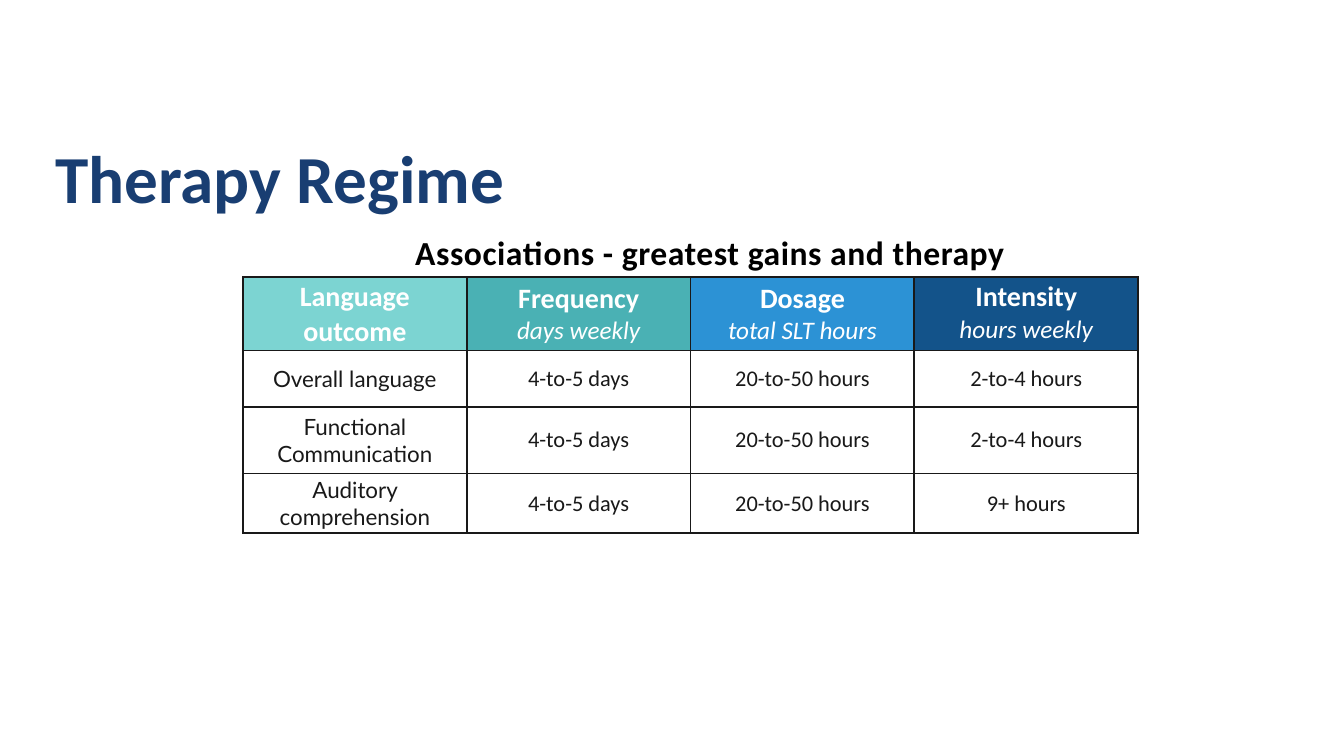
from lxml import etree
from pptx import Presentation
from pptx.dml.color import RGBColor
from pptx.enum.text import MSO_ANCHOR, PP_ALIGN
from pptx.oxml.ns import qn
from pptx.util import Inches, Pt

NAVY, INK, WHITE = "193E72", "191919", "FFFFFF"

HEADERS = [
    ("Language outcome", "", "7CD4D2"),
    ("Frequency", "days weekly", "4AB1B4"),
    ("Dosage", "total SLT hours", "2C92D5"),
    ("Intensity", "hours weekly", "13538A"),
]
OUTCOMES = [
    ("Overall language", "4-to-5 days", "20-to-50 hours", "2-to-4 hours"),
    ("Functional Communication", "4-to-5 days", "20-to-50 hours", "2-to-4 hours"),
    ("Auditory comprehension", "4-to-5 days", "20-to-50 hours", "9+ hours"),
]
ROW_HEIGHTS = [0.66, 0.56, 0.66, 0.56]
COLUMN_WIDTH = 2.22


def color(value):
    return RGBColor.from_string(value)


class SlideBuilder:
    def __init__(self, page, font="Calibri", border_color=INK, border_width=1.5):
        self.page = page
        self.font = font
        self.border_color = border_color
        self.border_width = border_width

    def style(self, para, size, fill, bold=False, italic=False, font=None):
        for span in para.runs:
            span.font.name = font or self.font
            span.font.size = Pt(size)
            span.font.bold = bold
            span.font.italic = italic
            span.font.color.rgb = color(fill)

    def text(self, words, left, top, width, height, size, fill,
             anchor=MSO_ANCHOR.TOP, line_spacing=None, tracking=0):
        box = self.page.shapes.add_textbox(
            Inches(left), Inches(top), Inches(width), Inches(height))
        frame = box.text_frame
        frame.word_wrap = True
        frame.vertical_anchor = anchor
        frame.text = words
        para = frame.paragraphs[0]
        para.line_spacing = line_spacing
        self.style(para, size, fill, bold=True)
        if tracking:
            para.runs[0].font._element.set("spc", str(round(tracking * 100)))

    def table(self, left, top, column_width, row_heights, columns):
        frame = self.page.shapes.add_table(
            len(row_heights), columns, Inches(left), Inches(top),
            Inches(column_width * columns), Inches(sum(row_heights)))
        for column in frame.table.columns:
            column.width = Inches(column_width)
        for row, height in zip(frame.table.rows, row_heights):
            row.height = Inches(height)
        return frame.table

    def cell(self, cell, lines, fill, anchor=MSO_ANCHOR.MIDDLE):
        """Fill a cell; each line is a pair of words and text style."""
        cell.fill.solid()
        cell.fill.fore_color.rgb = color(fill)
        cell.vertical_anchor = anchor
        cell.margin_left = cell.margin_right = Inches(0.05)
        cell.margin_top = cell.margin_bottom = Inches(0.03)
        cell.text_frame.text = "\n".join(words for words, _ in lines)
        for para, (_, look) in zip(cell.text_frame.paragraphs, lines):
            para.alignment = PP_ALIGN.CENTER
            self.style(para, **look)
        self.borders(cell)

    def borders(self, cell):
        properties = cell._tc.get_or_add_tcPr()
        for index, side in enumerate(("a:lnL", "a:lnR", "a:lnT", "a:lnB")):
            line = etree.Element(qn(side), w=str(Pt(self.border_width)))
            solid = etree.SubElement(line, qn("a:solidFill"))
            etree.SubElement(solid, qn("a:srgbClr"), val=self.border_color)
            properties.insert(index, line)


def main():
    deck = Presentation()
    deck.slide_width, deck.slide_height = Inches(13.33), Inches(7.5)
    page = deck.slides.add_slide(deck.slide_layouts[6])
    builder = SlideBuilder(page)

    # Title
    builder.text("Therapy Regime", 0.45, 1.08, 10.02, 1.45, 48, NAVY,
                 anchor=MSO_ANCHOR.MIDDLE, line_spacing=0.9)

    # Table header
    table = builder.table(2.41, 2.75, COLUMN_WIDTH, ROW_HEIGHTS, len(HEADERS))
    heading = dict(size=20, fill=WHITE, bold=True)
    unit_look = dict(size=18, fill=WHITE, italic=True)
    for column, (name, unit, fill) in enumerate(HEADERS):
        lines = [(name, heading)] + ([(unit, unit_look)] if unit else [])
        anchor = MSO_ANCHOR.TOP if name == "Intensity" else MSO_ANCHOR.MIDDLE
        builder.cell(table.cell(0, column), lines, fill, anchor)

    # Table body
    for row, values in enumerate(OUTCOMES, start=1):
        for column, value in enumerate(values):
            look = dict(size=16, fill=INK, font="Calibri" if column else "Lato")
            builder.cell(table.cell(row, column), [(value, look)], WHITE)

    # Table caption
    builder.text("Associations - greatest gains and therapy",
                 4.02, 2.25, 6.67, 0.5, 24, "000000", tracking=0.4)

    deck.save("out.pptx")


if __name__ == "__main__":
    main()
